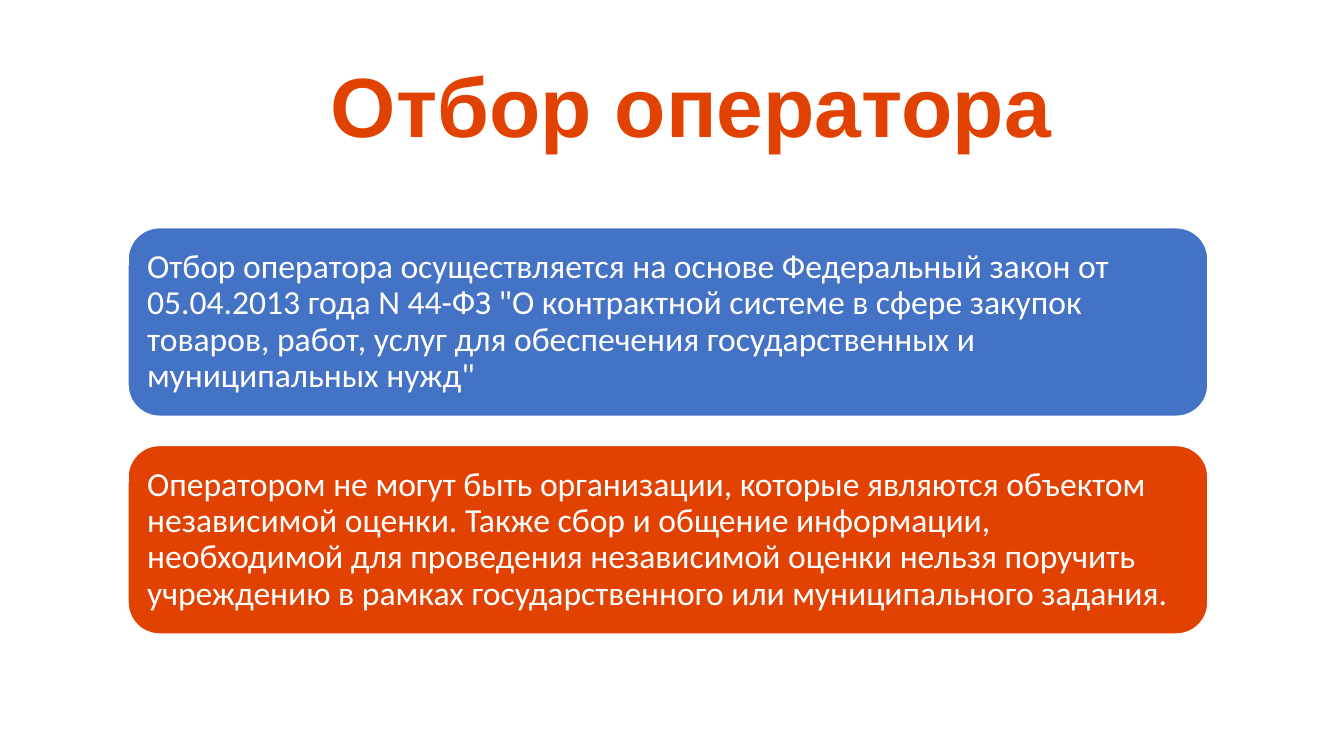
from pptx import Presentation
from pptx.dml.color import RGBColor
from pptx.enum.shapes import MSO_SHAPE
from pptx.enum.text import MSO_ANCHOR, PP_ALIGN
from pptx.util import Inches, Pt

COLORS = {"white": "FFFFFF", "blue": "4472C4", "orange": "E14101"}

RULES = [
    ("blue", 'Отбор оператора осуществляется на основе Федеральный закон от '
             '05.04.2013 года N 44-ФЗ "О контрактной системе в сфере закупок '
             'товаров, работ, услуг для обеспечения государственных и '
             'муниципальных нужд"'),
    ("orange", "Оператором не могут быть организации, которые являются объектом "
               "независимой оценки. Также сбор и общение информации, "
               "необходимой для проведения независимой оценки нельзя поручить "
               "учреждению в рамках государственного или муниципального задания."),
]


def color(name):
    return RGBColor.from_string(COLORS[name])


def write(shape, text, font_name, size, color_name, alignment, bold=False):
    frame = shape.text_frame
    frame.word_wrap = True
    frame.vertical_anchor = MSO_ANCHOR.MIDDLE
    frame.text = text
    para = frame.paragraphs[0]
    para.alignment = alignment
    para.line_spacing = 0.9
    font = para.runs[0].font
    font.name = font_name
    font.size = Pt(size)
    font.bold = bold
    font.color.rgb = color(color_name)


deck = Presentation()
deck.slide_width = Inches(13.33)
deck.slide_height = Inches(7.5)
page = deck.slides.add_slide(deck.slide_layouts[6])

# Rounded boxes with the selection rules
for index, (fill_name, text) in enumerate(RULES):
    box = page.shapes.add_shape(
        MSO_SHAPE.ROUNDED_RECTANGLE,
        Inches(1.27), Inches(2.26 + index * 2.16), Inches(10.71), Inches(1.87))
    box.shadow.inherit = False
    box.fill.solid()
    box.fill.fore_color.rgb = color(fill_name)
    box.line.color.rgb = color("white")
    box.line.width = Pt(1)
    frame = box.text_frame
    frame.margin_left = frame.margin_right = Inches(0.1)
    frame.margin_top = frame.margin_bottom = Inches(0.1)
    write(box, text, "Calibri", 24, "white", PP_ALIGN.LEFT)

# Title
title = page.shapes.add_textbox(
    Inches(1.13), Inches(-0.21), Inches(11.45), Inches(2.61))
write(title, "Отбор оператора", "Arial", 60, "orange", PP_ALIGN.CENTER, bold=True)

deck.save("out.pptx")
